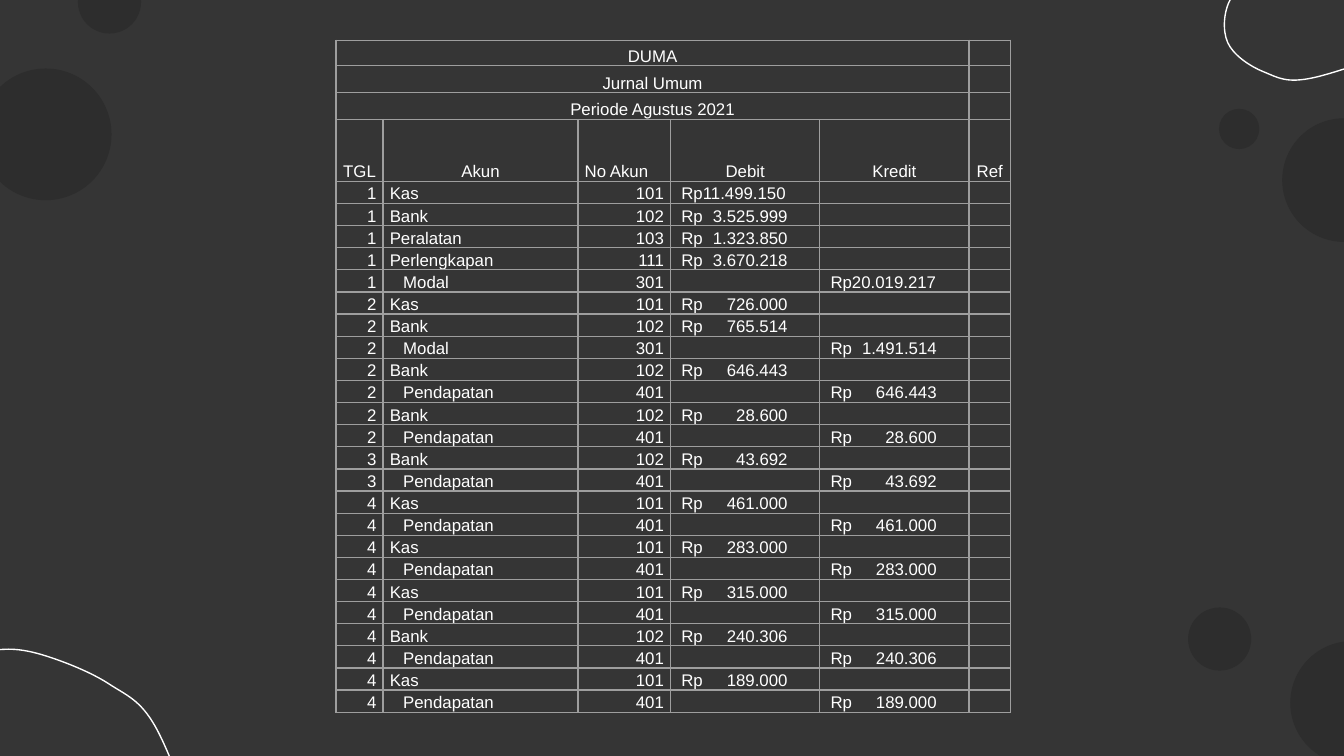
from math import cos, radians, sin

from lxml.etree import SubElement
from pptx import Presentation
from pptx.dml.color import RGBColor
from pptx.enum.shapes import MSO_SHAPE
from pptx.enum.text import MSO_ANCHOR, PP_ALIGN
from pptx.oxml.ns import qn
from pptx.util import Inches, Pt

COLORS = {"background": "353535", "circle": "2D2D2D", "white": "FFFFFF", "grid": "9E9E9E"}
FONT = "Arial"
LEFT, CENTER, RIGHT = PP_ALIGN.LEFT, PP_ALIGN.CENTER, PP_ALIGN.RIGHT

# Left, top, diameter
CIRCLES = [(9.6, 4.77, 0.92), (8.84, 4.52, 0.47), (9.54, 0.88, 0.92),
           (9.07, 0.81, 0.3), (-0.15, 0.51, 0.98), (0.58, -0.22, 0.47)]

# Points that the smooth blob outline passes through, on the slide at 45 degrees
BLOB_SIZE = (2.5, 1.33)
BLOB_CENTER = (0.66, 5.77)
BLOB_POINTS = [
    (0.26, 5.96), (-0.3, 5.35), (-0.24, 4.9), (0.03, 4.8), (0.37, 4.85), (0.83, 5.05),
    (1.18, 5.37), (1.5, 6.26), (1.45, 6.65), (1.22, 6.93), (0.88, 6.91), (0.64, 6.6),
]

TITLES = ["DUMA", "Jurnal Umum", "Periode Agustus 2021"]
HEADINGS = ["TGL", "Akun", "No Akun", "Debit", "Kredit", "Ref"]
COLUMN_WIDTHS = [0.35, 1.45, 0.69, 1.11, 1.11, 0.31]
HEAD_HEIGHTS = [0.19, 0.2, 0.2, 0.46]
TABLE_HEIGHT = 5
ACCOUNT_NUMBERS = {"Kas": 101, "Bank": 102, "Peralatan": 103,
                   "Perlengkapan": 111, "Modal": 301, "Pendapatan": 401}
CREDIT_ACCOUNTS = ("Modal", "Pendapatan")
ENTRIES = [
    (1, "Kas", "11.499.150"), (1, "Bank", "3.525.999"),
    (1, "Peralatan", "1.323.850"), (1, "Perlengkapan", "3.670.218"),
    (1, "Modal", "20.019.217"),
    (2, "Kas", "726.000"), (2, "Bank", "765.514"), (2, "Modal", "1.491.514"),
    (2, "Bank", "646.443"), (2, "Pendapatan", "646.443"),
    (2, "Bank", "28.600"), (2, "Pendapatan", "28.600"),
    (3, "Bank", "43.692"), (3, "Pendapatan", "43.692"),
    (4, "Kas", "461.000"), (4, "Pendapatan", "461.000"),
    (4, "Kas", "283.000"), (4, "Pendapatan", "283.000"),
    (4, "Kas", "315.000"), (4, "Pendapatan", "315.000"),
    (4, "Bank", "240.306"), (4, "Pendapatan", "240.306"),
    (4, "Kas", "189.000"), (4, "Pendapatan", "189.000"),
]


def color(name):
    return RGBColor.from_string(COLORS[name])


def add_circle(slide, left, top, diameter):
    circle = slide.shapes.add_shape(MSO_SHAPE.OVAL, Inches(left), Inches(top),
                                    Inches(diameter), Inches(diameter))
    circle.shadow.inherit = False
    circle.fill.solid()
    circle.fill.fore_color.rgb = color("circle")
    circle.line.fill.background()


def smooth_points(nodes):
    """Two handles and an end for each curve of a closed outline."""
    points = []
    for index in range(len(nodes)):
        before, start, end, after = (nodes[(index + step) % len(nodes)] for step in (-1, 0, 1, 2))
        points.append(tuple(s + (e - b) / 6 for b, s, e in zip(before, start, end)))
        points.append(tuple(e - (a - s) / 6 for s, e, a in zip(start, end, after)))
        points.append(end)
    return points


def add_blob(slide, left, top, rotation):
    # Turn the outline level, so that the shape's own rotation can tilt it
    cosine, sine = cos(radians(45)), sin(radians(45))
    level = []
    for x, y in BLOB_POINTS:
        dx, dy = x - BLOB_CENTER[0], y - BLOB_CENTER[1]
        level.append((Inches(dx * cosine + dy * sine), Inches(dy * cosine - dx * sine)))
    builder = slide.shapes.build_freeform(*level[0])
    builder.add_line_segments(smooth_points(level), close=True)
    blob = builder.convert_to_shape()

    # Join every three line ends into one curve
    lines = list(blob._element.iter(qn("a:lnTo")))
    for start in range(0, len(lines) - 2, 3):
        curve = lines[start].makeelement(qn("a:cubicBezTo"))
        lines[start].addprevious(curve)
        for line in lines[start:start + 3]:
            curve.append(line[0])
            line.getparent().remove(line)

    blob.left, blob.top = Inches(left), Inches(top)
    blob.width, blob.height = (Inches(side) for side in BLOB_SIZE)
    blob.rotation = rotation
    blob.shadow.inherit = False
    blob.fill.background()
    blob.line.color.rgb = color("white")
    blob.line.width = Pt(0.75)


def set_borders(cell):
    properties = cell._tc.get_or_add_tcPr()
    for position, side in enumerate(("lnL", "lnR", "lnT", "lnB")):
        border = properties.makeelement(qn(f"a:{side}"), {"w": str(Pt(0.75))})
        fill = SubElement(border, qn("a:solidFill"))
        SubElement(fill, qn("a:srgbClr"), val=COLORS["grid"])
        properties.insert(position, border)


def format_empty(cell):
    cell.fill.background()
    cell.vertical_anchor = MSO_ANCHOR.BOTTOM
    cell.margin_left = cell.margin_right = Inches(0.05)
    cell.margin_top = cell.margin_bottom = 0
    set_borders(cell)
    cell.text_frame.paragraphs[0]._p.get_or_add_endParaRPr().set("sz", "900")


def write(cell, text, alignment=LEFT, indent=0.05, tab=None):
    cell.margin_left = Inches(indent)
    paragraph = cell.text_frame.paragraphs[0]
    paragraph.text = text
    paragraph.alignment = alignment
    paragraph.line_spacing = 1.07
    paragraph.space_after = Pt(8)
    if tab:
        stops = SubElement(paragraph._p.get_or_add_pPr(), qn("a:tabLst"))
        SubElement(stops, qn("a:tab"), pos=str(Inches(tab)), algn="r")
    for run in paragraph.runs:
        run.font.name = FONT
        run.font.size = Pt(9)
        run.font.color.rgb = color("white")


def write_entry(table, row, day, account, amount):
    credit = account in CREDIT_ACCOUNTS
    write(table.cell(row, 0), str(day), RIGHT)
    write(table.cell(row, 1), account, indent=0.15 if credit else 0.05)
    write(table.cell(row, 2), str(ACCOUNT_NUMBERS[account]), RIGHT)
    # Eight-digit amounts fill the whole width after the currency
    gap = "" if len(amount) == 10 else "\t"
    write(table.cell(row, 4 if credit else 3), f"Rp{gap}{amount}", indent=0.08, tab=0.79)


def add_journal(slide):
    entry_height = (TABLE_HEIGHT - sum(HEAD_HEIGHTS)) / len(ENTRIES)
    heights = HEAD_HEIGHTS + [entry_height] * len(ENTRIES)
    table = slide.shapes.add_table(len(heights), len(COLUMN_WIDTHS), Inches(2.5), Inches(0.3),
                                   Inches(sum(COLUMN_WIDTHS)), Inches(TABLE_HEIGHT)).table
    table.first_row = table.horz_banding = False
    for column, width in zip(table.columns, COLUMN_WIDTHS):
        column.width = Inches(width)
    for row, height in zip(table.rows, heights):
        row.height = Inches(height)
    for cell in table.iter_cells():
        format_empty(cell)

    # Titles and headings
    for row, title in enumerate(TITLES):
        table.cell(row, 0).merge(table.cell(row, 4))
        write(table.cell(row, 0), title, CENTER)
    for column, heading in enumerate(HEADINGS):
        write(table.cell(len(TITLES), column), heading, LEFT if heading == "No Akun" else CENTER)

    # Journal entries
    for row, entry in enumerate(ENTRIES, start=len(HEAD_HEIGHTS)):
        write_entry(table, row, *entry)


def main():
    presentation = Presentation()
    presentation.slide_width = Inches(10)
    presentation.slide_height = presentation.slide_width * 9 // 16
    slide = presentation.slides.add_slide(presentation.slide_layouts[6])
    slide.background.fill.solid()
    slide.background.fill.fore_color.rgb = color("background")

    # Corner decoration
    add_blob(slide, -0.59, 5.1, 45)
    add_blob(slide, 9.04, -0.91, 135)
    for circle in CIRCLES:
        add_circle(slide, *circle)

    add_journal(slide)
    presentation.save("out.pptx")


if __name__ == "__main__":
    main()
